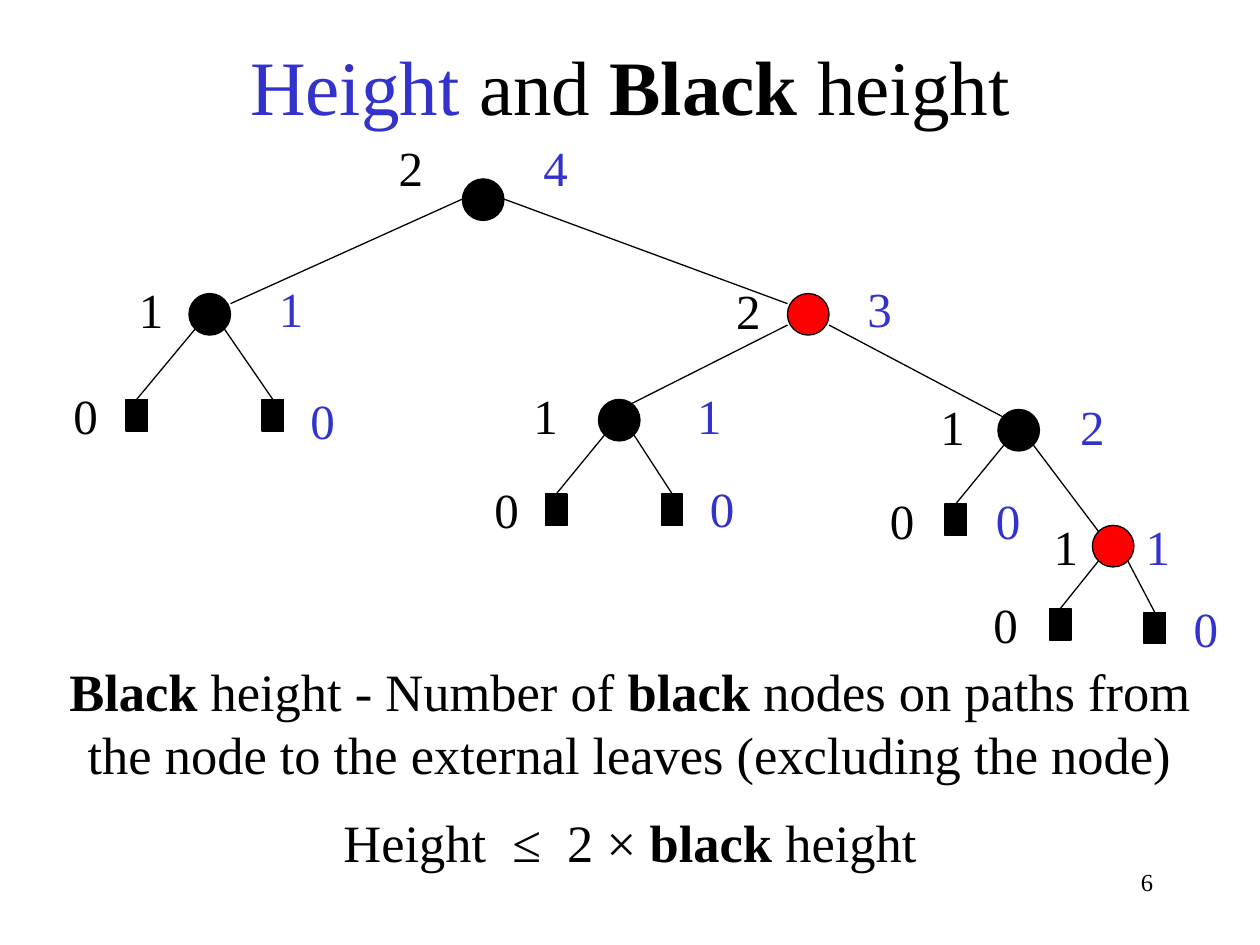
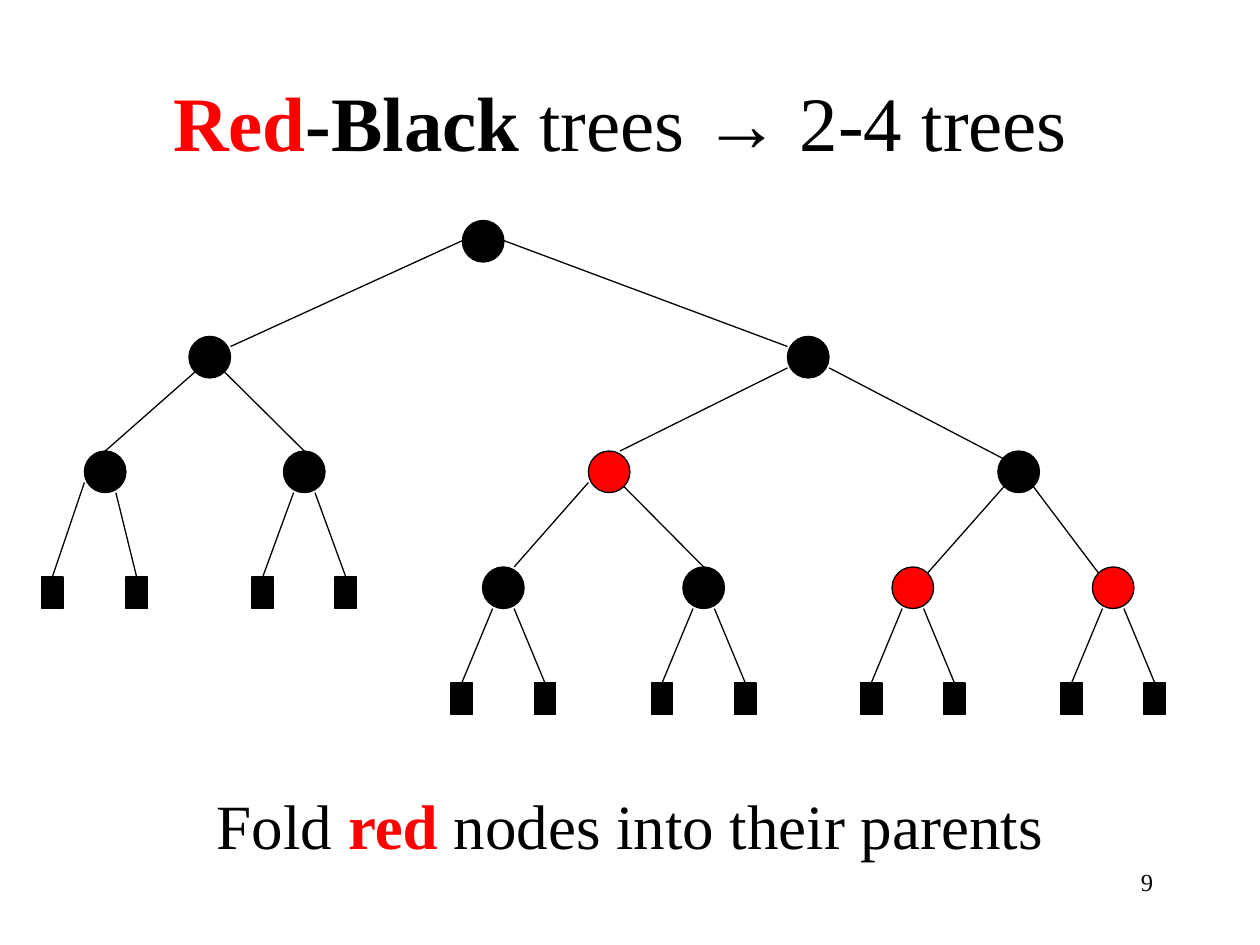
from dataclasses import dataclass
from typing import NamedTuple

from lxml import etree
from pptx import Presentation
from pptx import util as u
from pptx.dml.color import RGBColor
from pptx.enum import shapes, text
from pptx.oxml import ns

# Shared style
COLORS = {"black": "000000", "red": "FF0000", "blue": "3333CC"}
FONT = "Times New Roman"
TITLE_SIZE = 44
LABEL_SIZE = 28
LINE_WIDTH = u.Pt(0.75)
NODE_SIZE = (0.33, 0.33)
LEAF_SIZE = (0.17, 0.25)
TITLE_ONLY = 5

# Where edges touch a round node, measured from its top left corner
ANCHORS = {
    "W": (0, 0.16), "E": (0.33, 0.16),
    "NW": (0.05, 0.05), "NE": (0.28, 0.05),
    "SW": (0.05, 0.28), "SE": (0.28, 0.28),
    "WNW": (0, 0.08), "ENE": (0.33, 0.08),
    "WSW": (0, 0.25), "ESE": (0.33, 0.25),
    "NNE": (0.25, 0), "SSW": (0.08, 0.33), "SSE": (0.25, 0.33),
    "inner top": (0.17, 0.08), "inner left": (0.08, 0.08),
}


class Run(NamedTuple):
    text: str
    color: str = "black"
    bold: bool = False


class Box(NamedTuple):
    left: float
    top: float
    width: float
    height: float


class Label(NamedTuple):
    text: str
    left: float
    top: float


@dataclass
class Node:
    """A tree node; its edge leaves the parent at `start` and enters at `end`."""
    name: str
    left: float
    top: float
    parent: str = ""
    start: str = ""
    end: str = "N"
    color: str = "black"


@dataclass
class Leaf:
    """An external leaf, always entered from the top."""
    parent: str
    start: str
    left: float
    top: float


BLACK = Run("Black", bold=True)
PAGE_BOX = Box(7.17, 6.83, 2.08, 0.5)

# Tree with heights
HEIGHT_NODES = [
    Node("root", 3.67, 1.42),
    Node("left", 1.5, 2.33, "root", "W", "ENE"),
    Node("right", 6.25, 2.33, "root", "E", "WNW", "red"),
    Node("right-left", 4.75, 3.17, "right", "WSW", "inner top"),
    Node("right-right", 7.92, 3.25, "right", "ESE", "inner left"),
    Node("lowest", 8.67, 4.17, "right-right", "SE", "NW", "red"),
]
HEIGHT_LEAVES = [
    Leaf("left", "SW", 1, 3.17), Leaf("left", "SE", 2.08, 3.17),
    Leaf("right-left", "SW", 4.33, 3.92), Leaf("right-left", "SE", 5.25, 3.92),
    Leaf("right-right", "SW", 7.5, 4),
    Leaf("lowest", "SW", 8.33, 4.83), Leaf("lowest", "SE", 9.08, 4.86),
]
HEIGHT_LABELS = {
    "blue": [
        Label("4", 4.1, 1.04), Label("1", 2, 2.16), Label("3", 6.67, 2.16),
        Label("1", 5.32, 3.01), Label("2", 8.36, 3.1), Label("1", 8.88, 4.05),
        Label("0", 2.25, 3.05), Label("0", 5.42, 3.75),
        Label("0", 7.69, 3.84), Label("0", 9.26, 4.7),
    ],
    "black": [
        Label("2", 2.95, 1.04), Label("1", 0.89, 2.17), Label("2", 5.63, 2.18),
        Label("1", 4.02, 3.01), Label("1", 7.25, 3.1), Label("1", 8.15, 4.05),
        Label("0", 0.37, 3.01), Label("0", 3.71, 3.76),
        Label("0", 6.85, 3.84), Label("0", 7.67, 4.67),
    ],
}

# Tree to be folded
FOLD_INNER = [
    Node("root", 3.67, 1.75),
    Node("left", 1.5, 2.67, "root", "W", "ENE"),
    Node("right", 6.25, 2.67, "root", "E", "WNW"),
    Node("right-left", 4.67, 3.58, "right", "WSW", "NNE", "red"),
    Node("right-right", 7.92, 3.58, "right", "ESE", "inner left"),
    Node("outer left", 0.67, 3.58, "left", "SW"),
]
FOLD_BOTTOM = [
    Node("left-right", 2.25, 3.58, "left", "SE"),
    Node("low 1", 3.83, 4.5, "right-left", "WSW", "NNE"),
    Node("low 2", 5.42, 4.5, "right-left", "SE"),
    Node("low 3", 7.08, 4.5, "right-right", "SW", "NE", "red"),
    Node("low 4", 8.67, 4.5, "right-right", "SE", "NW", "red"),
]
FOLD_LEAVES = [
    Leaf("outer left", "WSW", 0.33, 4.58), Leaf("outer left", "SSE", 1, 4.58),
] + [
    Leaf(n.name, start, n.left + dx, 4.58 if n.top < 4 else 5.42)
    for n in FOLD_BOTTOM
    for start, dx in (("SSW", -0.25), ("SSE", 0.41))
]


def rgb(color: str) -> RGBColor:
    return RGBColor.from_string(COLORS[color])


def write(tf, lines: list[list[Run]], size: float, align, anchor) -> None:
    """Fill a text frame with one paragraph of styled runs."""
    tf.word_wrap = True
    tf.auto_size = text.MSO_AUTO_SIZE.NONE
    tf.vertical_anchor = anchor
    p = tf.paragraphs[0]
    p.alignment = align
    for i, line in enumerate(lines):
        if i:
            p.add_line_break()
        for run in line:
            r = p.add_run()
            r.text = run.text
            r.font.name = FONT
            r.font.size = u.Pt(size)
            r.font.bold = run.bold
            r.font.color.rgb = rgb(run.color)


def add_text(s, box: Box, lines: list[list[Run]], size: float,
             align=text.PP_ALIGN.CENTER, anchor=text.MSO_ANCHOR.TOP) -> None:
    sp = s.shapes.add_textbox(*map(u.Inches, box))
    write(sp.text_frame, lines, size, align, anchor)


def add_slide(prs, title_box: Box, title: list[Run], page: str):
    """Add a slide with its title and page number."""
    s = prs.slides.add_slide(prs.slide_layouts[TITLE_ONLY])
    sp = s.shapes.title
    sp.left, sp.top, sp.width, sp.height = map(u.Inches, title_box)
    write(sp.text_frame, [title], TITLE_SIZE,
          text.PP_ALIGN.CENTER, text.MSO_ANCHOR.MIDDLE)
    add_text(s, PAGE_BOX, [[Run(page)]], 14, text.PP_ALIGN.RIGHT)
    return s


def add_mark(s, kind, left: float, top: float, size: tuple, color: str):
    sp = s.shapes.add_shape(kind, *map(u.Inches, (left, top, *size)))
    sp.shadow.inherit = False
    sp.fill.solid()
    sp.fill.fore_color.rgb = rgb(color)
    sp.line.color.rgb = rgb("black")
    sp.line.width = LINE_WIDTH
    return sp


def add_edge(s, parent: Node, start: str, child, left: float, top: float,
             end: str) -> None:
    """Join a parent to a child shape whose corner is at left, top."""
    dx, dy = ANCHORS[start]
    ex, ey = ANCHORS.get(end, (0, 0))
    c = s.shapes.add_connector(
        shapes.MSO_CONNECTOR.STRAIGHT,
        *map(u.Inches, (parent.left + dx, parent.top + dy, left + ex, top + ey)))
    if end == "N":
        c.end_connect(child, 0)
    c.line.color.rgb = rgb("black")
    c.line.width = LINE_WIDTH
    etree.SubElement(c._element.spPr, ns.qn("a:effectLst"))


def add_tree(s, nodes: list[Node], leaves: list[Leaf]) -> None:
    by_name = {n.name: n for n in nodes}
    for n in nodes:
        sp = add_mark(s, shapes.MSO_SHAPE.OVAL, n.left, n.top, NODE_SIZE, n.color)
        if n.parent:
            add_edge(s, by_name[n.parent], n.start, sp, n.left, n.top, n.end)
    for f in leaves:
        sp = add_mark(s, shapes.MSO_SHAPE.RECTANGLE, f.left, f.top, LEAF_SIZE, "black")
        add_edge(s, by_name[f.parent], f.start, sp, f.left, f.top, "N")


def height_slide(prs) -> None:
    title = [Run("Height", "blue"), Run(" and "), BLACK, Run(" height")]
    s = add_slide(prs, Box(0, 0.17, 10, 1), title, "6")
    add_tree(s, HEIGHT_NODES, HEIGHT_LEAVES)
    for color, labels in HEIGHT_LABELS.items():
        for label in labels:
            add_text(s, Box(label.left, label.top, 0.62, 0.57),
                     [[Run(label.text, color)]], LABEL_SIZE)

    # Definition and bound
    black = Run("black", bold=True)
    add_text(s, Box(0, 5.18, 10, 1.11), [
        [BLACK, Run(" height - Number of "), black, Run(" nodes on paths from")],
        [Run(" the node to the external leaves (excluding the node) ")],
    ], 30)
    add_text(s, Box(0, 6.38, 10, 0.61),
             [[Run("Height  ≤  2 × "), black, Run(" height")]], 30)


def fold_slide(prs) -> None:
    title = [Run("Red", "red", True), Run("-Black", bold=True),
             Run(" trees → 2-4 trees ")]
    s = add_slide(prs, Box(0, 0.33, 10, 1.25), title, "9")
    add_tree(s, FOLD_INNER + FOLD_BOTTOM, FOLD_LEAVES)
    add_text(s, Box(0, 5.92, 10, 1.25),
             [[Run("Fold "), Run("red", "red", True), Run(" nodes into their parents")]],
             36, anchor=text.MSO_ANCHOR.MIDDLE)


def main() -> None:
    prs = Presentation()
    prs.slide_width, prs.slide_height = u.Inches(10), u.Inches(7.5)
    height_slide(prs)
    fold_slide(prs)
    prs.save("out.pptx")


if __name__ == "__main__":
    main()
